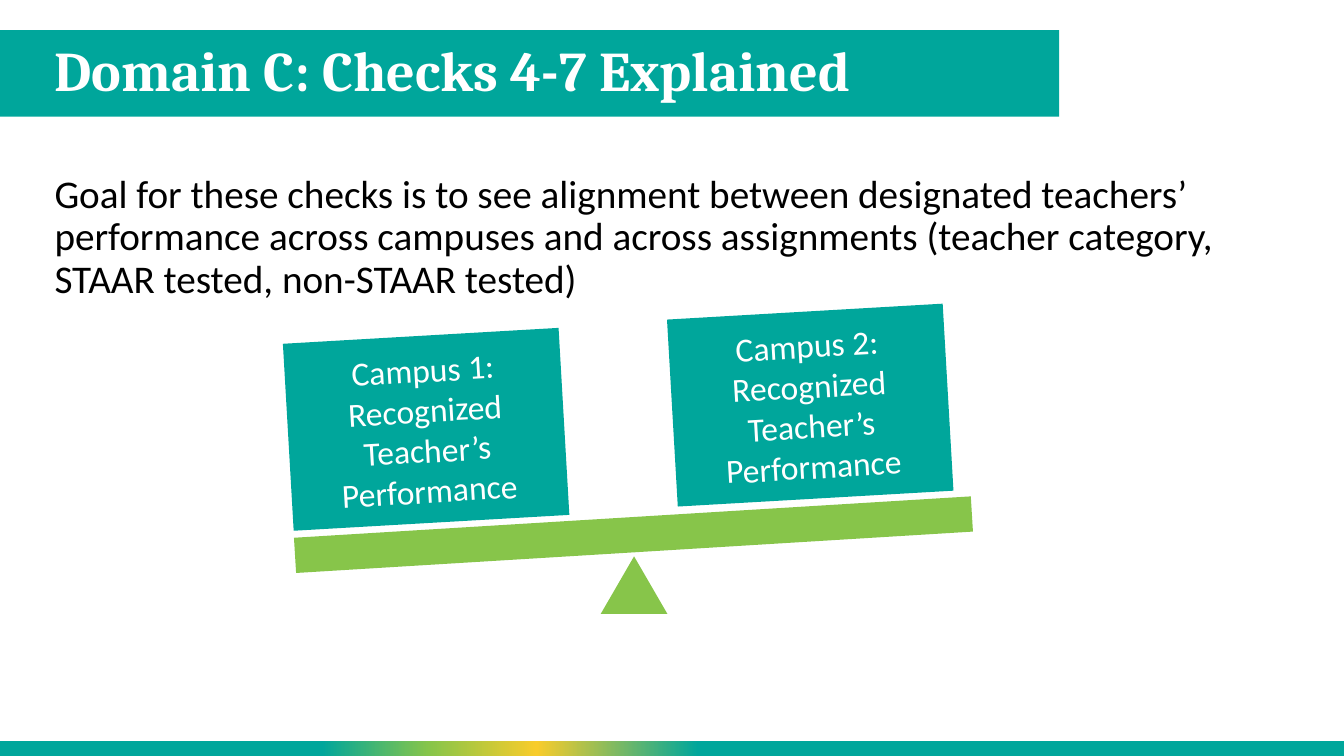
from lxml import etree
from pptx import Presentation
from pptx import util as u
from pptx.dml.color import RGBColor
from pptx.enum import shapes, text
from pptx.oxml import ns

COLOURS = {"teal": "00A69B", "green": "87C54A", "yellow": "F8CC2B",
           "white": "FFFFFF", "black": "000000"}


def add_block(parent, kind, left, top, width, height, colour, rotation=0):
    block = parent.add_shape(kind, u.Cm(left), u.Cm(top), u.Cm(width), u.Cm(height))
    block.fill.solid()
    block.fill.fore_color.rgb = RGBColor.from_string(COLOURS[colour])
    block.line.fill.background()
    block.shadow.inherit = False
    block.rotation = rotation
    return block


def write(box, wording, font, size, colour, align, anchor, bold=False):
    frame = box.text_frame
    frame.word_wrap = True
    frame.auto_size = text.MSO_AUTO_SIZE.NONE
    frame.vertical_anchor = anchor
    para = frame.paragraphs[0]
    para.alignment = align
    para.space_before = u.Pt(0)
    span = para.add_run()
    span.text = wording
    span.font.name = font
    span.font.size = u.Pt(size)
    span.font.bold = bold
    span.font.color.rgb = RGBColor.from_string(COLOURS[colour])
    return para


deck = Presentation()
deck.slide_width = u.Cm(33.87)
deck.slide_height = u.Cm(19.05)
page = deck.slides.add_slide(deck.slide_layouts[1])
rectangle = shapes.MSO_SHAPE.RECTANGLE

# Title band and footer strip, behind the placeholders
title_band = add_block(page.shapes, rectangle, -0.03, 0.76, 26.72, 2.18, "teal")
footer = add_block(page.shapes, rectangle, -0.03, 18.67, 33.9, 0.38, "teal")
for position, bar in enumerate((title_band, footer), start=2):
    page.shapes._spTree.insert(position, bar._element)

# Footer gradient
footer.fill.gradient()
footer.fill.gradient_angle = 180
stop_list = footer._element.spPr.find(ns.qn("a:gradFill")).find(ns.qn("a:gsLst"))
for stop in list(stop_list):
    stop_list.remove(stop)
for percent, colour in ((0, "teal"), (48, "teal"), (60, "yellow"),
                        (68, "green"), (76, "teal"), (100, "teal")):
    stop = etree.SubElement(stop_list, ns.qn("a:gs"), pos=str(percent * 1000))
    etree.SubElement(stop, ns.qn("a:srgbClr"), val=COLOURS[colour])

# Title
title = page.shapes.title
title.left, title.top, title.width, title.height = map(u.Cm, (1.12, 0.76, 25.55, 2.18))
para = write(title, "Domain C: Checks 4-7 Explained", "Cambria", 40, "white",
             text.PP_ALIGN.LEFT, text.MSO_ANCHOR.MIDDLE, bold=True)
para.line_spacing = 0.9

# Goal statement, without a bullet
body = page.placeholders[1]
body.left, body.top, body.width, body.height = map(u.Cm, (1.12, 4.27, 31.6, 12.37))
properties = body.text_frame.paragraphs[0]._p.get_or_add_pPr()
properties.set("marL", "0")
properties.set("indent", "0")
etree.SubElement(properties, ns.qn("a:buNone"))
para = write(body, "Goal for these checks is to see alignment between designated teachers’ "
             "performance across campuses and across assignments (teacher category, "
             "STAAR tested, non-STAAR tested)", "Calibri", 28, "black",
             text.PP_ALIGN.LEFT, text.MSO_ANCHOR.TOP)
para.line_spacing = 0.9

# Seesaw with one box per campus
seesaw = page.shapes.add_group_shape().shapes
add_block(seesaw, rectangle, 7.42, 13.03, 17.09, 0.89, "green", 356.5)
add_block(seesaw, shapes.MSO_SHAPE.ISOSCELES_TRIANGLE, 15.14, 14.02, 1.68, 1.45, "green")
for campus, left, top in ((1, 7.26, 8.46), (2, 16.94, 7.85)):
    box = add_block(seesaw, rectangle, left, top, 6.96, 4.72, "teal", 356.7)
    write(box, f"Campus {campus}: Recognized Teacher’s Performance", "Calibri", 24, "white",
          text.PP_ALIGN.CENTER, text.MSO_ANCHOR.MIDDLE)

deck.save("out.pptx")
